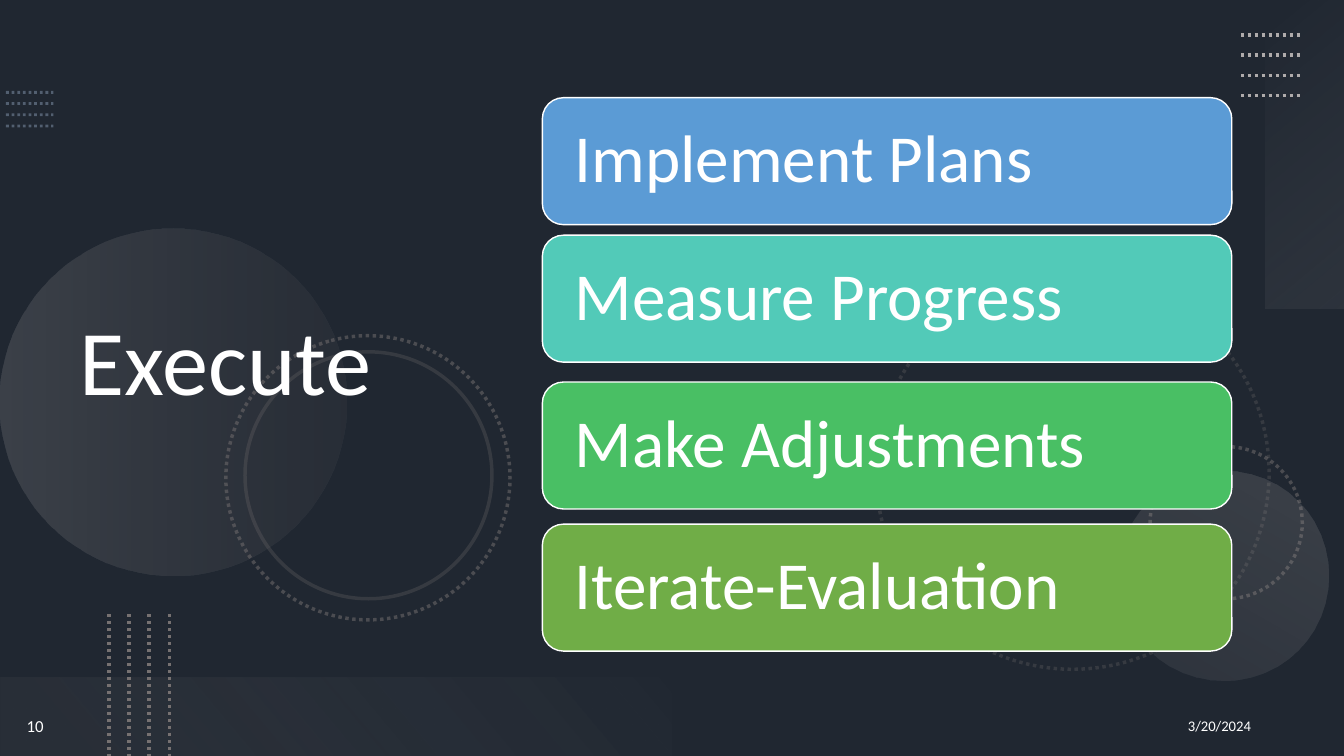
from pptx import Presentation
from pptx.dml.color import RGBColor
from pptx.enum.dml import MSO_LINE
from pptx.enum.shapes import MSO_CONNECTOR, MSO_SHAPE
from pptx.enum.text import MSO_ANCHOR, MSO_AUTO_SIZE, PP_ALIGN
from pptx.oxml.ns import qn
from pptx.util import Pt
from lxml.etree import SubElement

WHITE = RGBColor(0xFF, 0xFF, 0xFF)
BLACK = RGBColor(0x00, 0x00, 0x00)
SLATE = RGBColor(0x44, 0x54, 0x6A)
STEEL = RGBColor(0x84, 0x97, 0xB0)
SILVER = RGBColor(0xAF, 0xAB, 0xAB)
GREY = RGBColor(0x76, 0x71, 0x71)
PALE = RGBColor(0xF1, 0xF0, 0xF0)
BLUE = RGBColor(0x5B, 0x9B, 0xD5)
TEAL = RGBColor(0x52, 0xCA, 0xB8)
GREEN = RGBColor(0x49, 0xBF, 0x64)
OLIVE = RGBColor(0x70, 0xAD, 0x47)

FONT = "Calibri"
WIDTH, HEIGHT = 960, 540
BAR_LEFT, BAR_WIDTH, BAR_HEIGHT = 387.4, 492.5, 90.7
STEPS = [
    ("Implement Plans", 69.8, BLUE),
    ("Measure Progress", 168, TEAL),
    ("Make Adjustments", 272.9, GREEN),
    ("Iterate-Evaluation", 374.4, OLIVE),
]


def set_opacity(shape, *percents):
    """Give each colour of the shape, in order, its opacity."""
    colors = shape.element.spPr.iter(qn("a:srgbClr"))
    for color, percent in zip(list(colors), percents):
        SubElement(color, qn("a:alpha"), val=str(percent * 1000))


def add_plain_shape(page, kind, left, top, width, height, rotation=0):
    """Add a preset shape with no fill, line or shadow."""
    shape = page.shapes.add_shape(kind, Pt(left), Pt(top), Pt(width), Pt(height))
    shape.shadow.inherit = False
    shape.rotation = rotation
    shape.fill.background()
    shape.line.fill.background()
    return shape


def add_gradient(page, kind, frame, rotation, angle, stops):
    shape = add_plain_shape(page, kind, *frame, rotation=rotation)
    shape.fill.gradient()
    shape.fill.gradient_angle = 360 - angle
    for target, (position, color, _) in zip(shape.fill.gradient_stops, stops):
        target.position = position
        target.color.rgb = color
    set_opacity(shape, *(opacity for _, _, opacity in stops))


def add_ring(page, left, top, size, rotation, opacity, dash=MSO_LINE.ROUND_DOT):
    ring = add_plain_shape(page, MSO_SHAPE.OVAL, left, top, size, size, rotation)
    ring.line.color.rgb = GREY
    ring.line.width = Pt(2.5)
    ring.line.dash_style = dash
    set_opacity(ring, opacity)


def add_dotted_lines(page, start, end, step, color, weight=2.5, opacity=100):
    """Add four parallel dotted lines, each moved by step from the one before."""
    for index in range(4):
        (x1, y1), (x2, y2) = [
            (x + index * step[0], y + index * step[1]) for x, y in (start, end)
        ]
        line = page.shapes.add_connector(
            MSO_CONNECTOR.STRAIGHT, Pt(x1), Pt(y1), Pt(x2), Pt(y2))
        line.line.color.rgb = color
        line.line.width = Pt(weight)
        line.line.dash_style = MSO_LINE.ROUND_DOT
        set_opacity(line, opacity)
        SubElement(line.element.spPr, qn("a:effectLst"))


def write_text(shape, text, size, align=PP_ALIGN.LEFT, spacing=1.0, inset=7.2):
    frame = shape.text_frame
    frame.word_wrap = True
    frame.auto_size = MSO_AUTO_SIZE.NONE
    frame.vertical_anchor = MSO_ANCHOR.MIDDLE
    frame.margin_left = frame.margin_right = Pt(inset)
    para = frame.paragraphs[0]
    para.alignment = align
    para.line_spacing = spacing
    span = para.add_run()
    span.text = text
    span.font.name = FONT
    span.font.size = Pt(size)
    span.font.color.rgb = WHITE


def add_label(page, text, left, width, size, align):
    box = page.shapes.add_textbox(Pt(left), Pt(496.8), Pt(width), Pt(43.2))
    write_text(box, text, size, align=align)


def add_bar(page, text, top, color):
    bar = add_plain_shape(
        page, MSO_SHAPE.ROUNDED_RECTANGLE, BAR_LEFT, top, BAR_WIDTH, BAR_HEIGHT)
    bar.fill.solid()
    bar.fill.fore_color.rgb = color
    bar.line.color.rgb = WHITE
    bar.line.width = Pt(1)
    write_text(bar, text, 48, spacing=0.9, inset=18.8)


def add_backdrop(page):
    page.background.fill.solid()
    page.background.fill.fore_color.rgb = SLATE
    shade = add_plain_shape(page, MSO_SHAPE.RECTANGLE, 0, 0, WIDTH, HEIGHT)
    shade.fill.solid()
    shade.fill.fore_color.rgb = BLACK
    set_opacity(shade, 53)

    add_dotted_lines(page, (4.3, 66), (38.2, 66), (0, 8), STEEL, 2, 50)
    add_ring(page, 625.7, 197.3, 280.8, 75, 25)
    add_ring(page, 821.5, 319, 108.7, 270, 50)
    add_gradient(page, MSO_SHAPE.OVAL, (0, 163.4, 247.7, 247.7), 270, 90,
                 [(0, SILVER, 20), (1, GREY, 10)])
    add_gradient(page, MSO_SHAPE.OVAL, (799.2, 336.2, 149.8, 149.8), 210, 90,
                 [(0, SILVER, 10), (1, SILVER, 20)])
    add_ring(page, 161.3, 239.8, 203, 75, 50)
    add_ring(page, 175, 251.3, 176.4, 75, 25, dash=MSO_LINE.SOLID)
    add_gradient(page, MSO_SHAPE.RECTANGLE, (822.2, 82.1, 220.3, 56.2), 270, 140,
                 [(0, PALE, 0), (1, SILVER, 10)])
    add_dotted_lines(page, (886.3, 25), (929.5, 25), (0, 14.4), SILVER)
    add_gradient(page, MSO_SHAPE.RECTANGLE, (0, 483.8, 480, 56.2), 180, 140,
                 [(0.1, GREY, 10), (1, PALE, 0)])
    add_dotted_lines(page, (77.8, 438.5), (77.8, HEIGHT), (14.4, 0), GREY)


def place_title(page, text):
    """Fill the title placeholder and bring it in front of the backdrop."""
    title = page.shapes.title
    title.left, title.top = Pt(49.7), Pt(38.9)
    title.width, title.height = Pt(330.5), Pt(444.2)
    write_text(title, text, 66, spacing=0.9)
    title.element.getparent().append(title.element)


def main():
    deck = Presentation()
    deck.slide_width, deck.slide_height = Pt(WIDTH), Pt(HEIGHT)
    page = deck.slides.add_slide(deck.slide_layouts.get_by_name("Title Only"))
    add_backdrop(page)
    place_title(page, "Execute")
    add_label(page, "10", 0, 50.4, 12, PP_ALIGN.CENTER)
    add_label(page, "3/20/2024", 720.7, 180, 10.5, PP_ALIGN.RIGHT)
    for text, top, color in STEPS:
        add_bar(page, text, top, color)
    deck.save("out.pptx")


if __name__ == "__main__":
    main()
